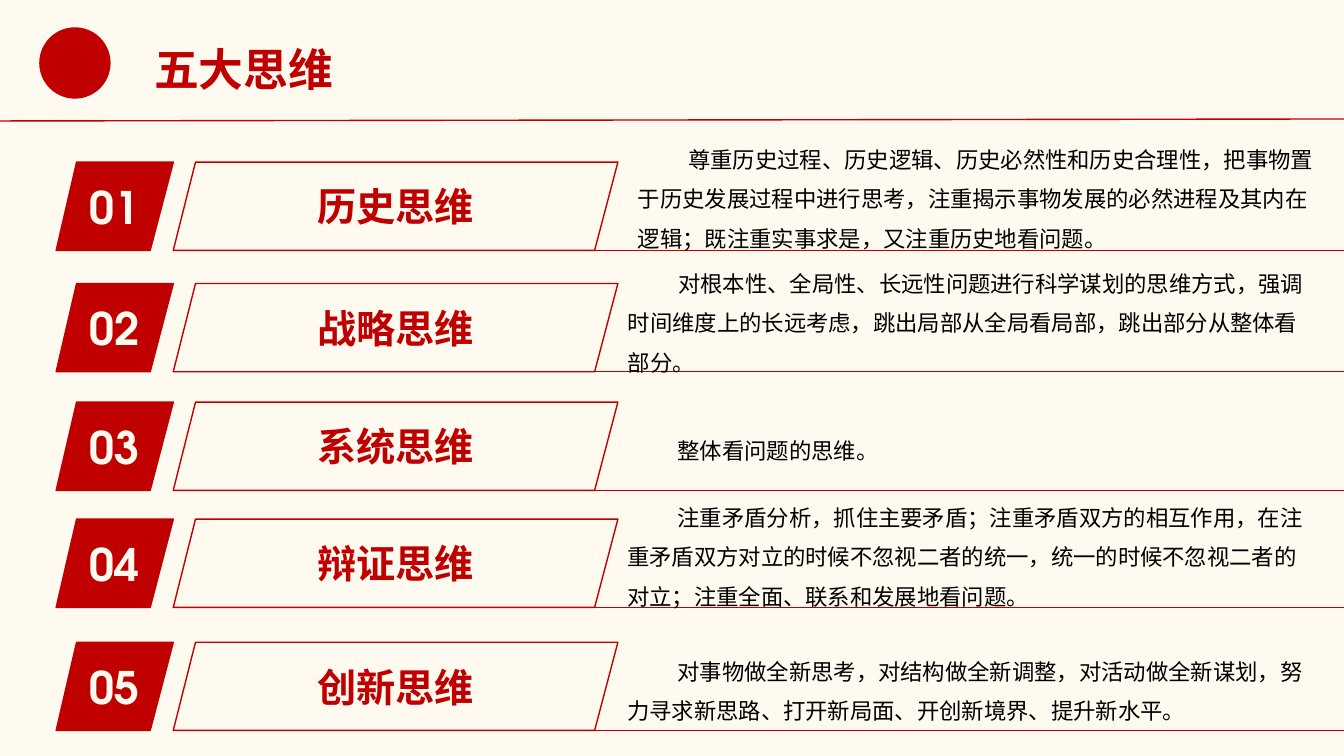
from dataclasses import dataclass

from pptx import Presentation, util as u
from pptx.dml.color import RGBColor
from pptx.enum import shapes, text
from pptx.oxml.ns import qn
from pptx.oxml.xmlchemy import OxmlElement

Pt = u.Pt
RED, CREAM, BLACK = "C00000", "FFFAF0", "000000"
CJK, GEOMETRIC = "Noto Sans CJK SC", "TeX Gyre Adventor"
SLIDE_WIDTH, SLIDE_HEIGHT = 960, 540
ROW_HEIGHT = 63

# Slanted outlines: x of top left, top right, bottom right, bottom left
NUMBER_EDGES = (54.7, 123.8, 107.3, 40.1)
BANNER_EDGES = (139.7, 441.4, 424.8, 123.8)


@dataclass
class Thinking:
    name: str
    top: float
    note_left: float
    note_top: float
    note_height: float
    note: str


THINKINGS = [
    Thinking("历史思维", 115.8, 448.6, 92.2, 89.3,
             "尊重历史过程、历史逻辑、历史必然性和历史合理性，把事物置于历史发展过程中进行思考，"
             "注重揭示事物发展的必然进程及其内在逻辑；既注重实事求是，又注重历史地看问题。"),
    Thinking("战略思维", 202.5, 441.4, 180.7, 89.3,
             "对根本性、全局性、长远性问题进行科学谋划的思维方式，强调时间维度上的长远考虑，"
             "跳出局部从全局看局部，跳出部分从整体看部分。"),
    Thinking("系统思维", 287.2, 440.9, 300.2, 35.3, "整体看问题的思维。"),
    Thinking("辩证思维", 370.8, 440.9, 347.8, 92.2,
             "注重矛盾分析，抓住主要矛盾；注重矛盾双方的相互作用，在注重矛盾双方对立的时候"
             "不忽视二者的统一，统一的时候不忽视二者的对立；注重全面、联系和发展地看问题。"),
    Thinking("创新思维", 458.8, 440.9, 457.9, 64.1,
             "对事物做全新思考，对结构做全新调整，对活动做全新谋划，"
             "努力寻求新思路、打开新局面、开创新境界、提升新水平。"),
]


def color(code: str) -> RGBColor:
    return RGBColor.from_string(code)


def write(frame, words: str, size: float, font: str, code: str, bold: bool = False):
    """Fill a text frame with one paragraph and return it."""
    paragraph = frame.paragraphs[0]
    paragraph.text = words
    paragraph.font.size = Pt(size)
    paragraph.font.name = font
    paragraph.font.bold = bold
    paragraph.font.color.rgb = color(code)
    east_asian = OxmlElement("a:ea")
    east_asian.set("typeface", font)
    paragraph._p.pPr.find(qn("a:defRPr")).append(east_asian)
    return paragraph


def add_rule(slide, x1: float, y1: float, x2: float, y2: float, width: float) -> None:
    rule = slide.shapes.add_connector(
        shapes.MSO_CONNECTOR.STRAIGHT, Pt(x1), Pt(y1), Pt(x2), Pt(y2))
    rule.line.color.rgb = color(RED)
    rule.line.width = Pt(width)
    rule._element.spPr.append(OxmlElement("a:effectLst"))


def add_slanted(slide, edges: tuple[float, ...], top: float, filled: bool):
    """Draw a slanted panel and return its centred text frame."""
    bottom = top + ROW_HEIGHT
    start, *others = [(Pt(x), Pt(y)) for x, y in zip(edges, (top, top, bottom, bottom))]
    outline = slide.shapes.build_freeform(*start)
    outline.add_line_segments(others, close=True)
    panel = outline.convert_to_shape()
    panel.shadow.inherit = False
    if filled:
        panel.fill.solid()
        panel.fill.fore_color.rgb = color(RED)
    else:
        panel.fill.background()
    panel.line.color.rgb = color(RED)
    panel.line.width = Pt(1)
    frame = panel.text_frame
    frame.vertical_anchor = text.MSO_ANCHOR.MIDDLE
    frame.paragraphs[0].alignment = text.PP_ALIGN.CENTER
    return frame


def add_text_frame(slide, left: float, top: float, width: float, height: float, wrap: bool):
    frame = slide.shapes.add_textbox(Pt(left), Pt(top), Pt(width), Pt(height)).text_frame
    frame.word_wrap = wrap
    frame.auto_size = text.MSO_AUTO_SIZE.SHAPE_TO_FIT_TEXT
    return frame


def add_header(slide) -> None:
    emblem = slide.shapes.add_shape(
        shapes.MSO_SHAPE.OVAL, Pt(28), Pt(19.5), Pt(51), Pt(51))
    emblem.shadow.inherit = False
    emblem.fill.solid()
    emblem.fill.fore_color.rgb = color(RED)
    emblem.line.fill.background()
    add_rule(slide, 0, 86.4, SLIDE_WIDTH, 85, 1)
    title = add_text_frame(slide, 103, 25.9, 144, 46, wrap=False)
    write(title, "五大思维", 32, CJK, RED, bold=True)


def add_thinking(slide, number: int, thinking: Thinking) -> None:
    # Number and name
    write(add_slanted(slide, NUMBER_EDGES, thinking.top, filled=True),
          f"{number:02}", 32, GEOMETRIC, CREAM, bold=True)
    write(add_slanted(slide, BANNER_EDGES, thinking.top, filled=False),
          thinking.name, 28, CJK, RED, bold=True)
    # Underline and explanation
    baseline = thinking.top + ROW_HEIGHT
    add_rule(slide, BANNER_EDGES[2], baseline, SLIDE_WIDTH, baseline, 0.5)
    frame = add_text_frame(slide, thinking.note_left, thinking.note_top,
                           504, thinking.note_height, wrap=True)
    note = write(frame, thinking.note, 16, CJK, BLACK)
    note.line_spacing = Pt(28)
    note._p.pPr.set("marL", "0")
    note._p.pPr.set("indent", str(Pt(36)))


def main() -> None:
    deck = Presentation()
    deck.slide_width, deck.slide_height = Pt(SLIDE_WIDTH), Pt(SLIDE_HEIGHT)
    slide = deck.slides.add_slide(deck.slide_layouts[6])
    slide.background.fill.solid()
    slide.background.fill.fore_color.rgb = color(CREAM)
    add_header(slide)
    for number, thinking in enumerate(THINKINGS, start=1):
        add_thinking(slide, number, thinking)
    deck.save("out.pptx")


if __name__ == "__main__":
    main()
